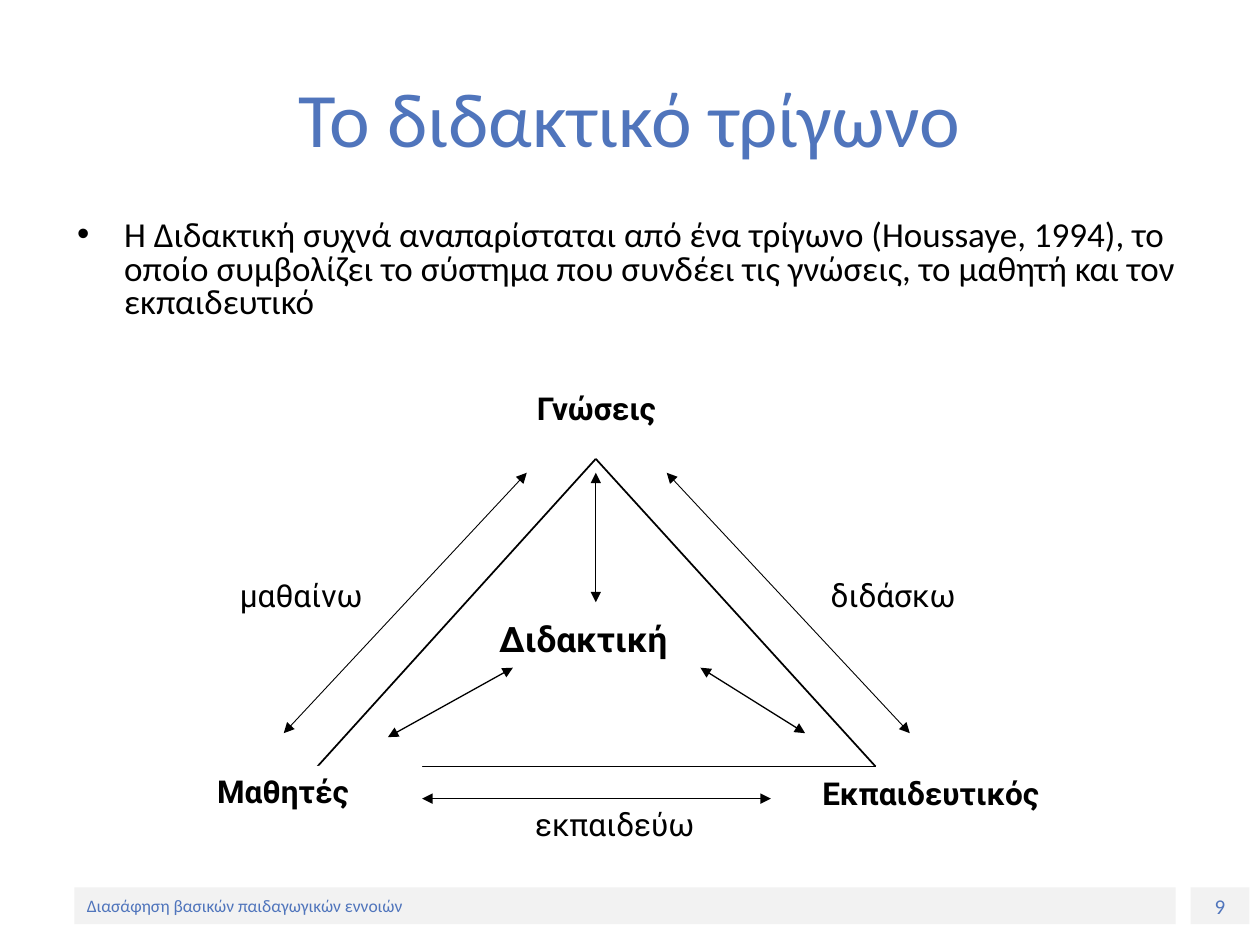
from dataclasses import dataclass

from lxml.etree import SubElement
from pptx import Presentation
from pptx.dml.color import RGBColor as Color
from pptx.enum.shapes import MSO_CONNECTOR as Connector, MSO_SHAPE as Shape
from pptx.enum.text import MSO_ANCHOR as Anchor, PP_ALIGN as Align
from pptx.oxml.ns import qn
from pptx.slide import Slide
from pptx.text.text import TextFrame
from pptx.util import Cm, Pt


@dataclass(frozen=True)
class Theme:
    accent: Color = Color(0x50, 0x75, 0xBC)
    ink: Color = Color(0, 0, 0)
    paper: Color = Color(0xFF, 0xFF, 0xFF)
    band: Color = Color(0xF2, 0xF2, 0xF2)
    text_font: str = "Calibri"
    diagram_font: str = "Roboto"
    title_size: int = 44
    body_size: int = 20
    centre_size: int = 20
    label_size: int = 18
    number_size: int = 12
    footer_size: int = 10
    side_width: float = 1
    inner_width: float = 0.75
    outer_width: float = 0.5


THEME = Theme()


@dataclass(frozen=True)
class Label:
    """A text in a box; lengths in centimetres. No fill means a text box."""
    text: str
    left: float
    top: float
    width: float
    height: float
    size: int = THEME.label_size
    bold: bool = False
    fill: Color | None = None
    font: str = THEME.diagram_font
    color: Color = THEME.ink
    align: Align = Align.CENTER
    anchor: Anchor = Anchor.TOP


@dataclass(frozen=True)
class Line:
    """A straight line between two points in centimetres."""
    start: tuple[float, float]
    end: tuple[float, float]
    width: float
    arrows: bool = True


def corner(text: str, left: float, top: float, width: float = 5.61,
           height: float = 1.57, size: int = THEME.label_size) -> Label:
    return Label(text, left, top, width, height, size, True, THEME.paper)


def action(text: str, left: float, top: float) -> Label:
    return Label(text, left, top, 4.93, 1.32)


def band(text: str, left: float, width: float, size: int, align: Align) -> Label:
    return Label(text, left, 17.89, width, 0.74, size, False, THEME.band,
                 THEME.text_font, THEME.accent, align, Anchor.MIDDLE)


# Footer
FOOTER = [
    band("9", 24, 1.19, THEME.number_size, Align.CENTER),
    band("Διασάφηση βασικών παιδαγωγικών εννοιών", 1.5, 22.2,
         THEME.footer_size, Align.LEFT),
]

# Triangle and the arrows inside it
APEX, LEFT, RIGHT = (12.01, 9.25), (6.4, 15.45), (17.65, 15.45)
INNER_LABELS = [
    corner("Διδακτική", 9.22, 12.32, 5.08, 1.5, THEME.centre_size),
    corner("Γνώσεις", 9.22, 7.72),
]
SIDES = [Line(start, end, THEME.side_width, arrows=False)
         for start, end in ((APEX, LEFT), (LEFT, RIGHT), (RIGHT, APEX))]
INNER_ARROWS = [
    Line((12.01, 12.14), (12.01, 9.53), THEME.inner_width),
    Line((14.12, 13.46), (16.23, 14.78), THEME.inner_width),
    Line((7.82, 14.86), (10.34, 13.46), THEME.inner_width),
]

# Base corners, actions and the arrows along the sides
OUTER_LABELS = [
    corner("Μαθητές", 2.9, 15.44),
    corner("Εκπαιδευτικός", 14.83, 15.47, 7.87),
    action("εκπαιδεύω", 9.93, 16.1),
    action("διδάσκω", 15.54, 11.48),
    action("μαθαίνω", 3.61, 11.48),
]
OUTER_ARROWS = [
    Line((8.51, 16.1), (15.54, 16.1), THEME.outer_width),
    Line((5.72, 14.78), (10.62, 9.53), THEME.outer_width),
    Line((18.34, 14.78), (13.44, 9.53), THEME.outer_width),
]


def write(frame: TextFrame, text: str, font: str, size: int, color: Color,
          align: Align, anchor: Anchor, bold: bool = False) -> None:
    frame.word_wrap = True
    frame.vertical_anchor = anchor
    para = frame.paragraphs[0]
    para.alignment = align
    span = para.add_run()
    span.text = text
    span.font.name = font
    span.font.size = Pt(size)
    span.font.bold = bold
    span.font.color.rgb = color


def draw_label(page: Slide, label: Label) -> None:
    place = [Cm(v) for v in (label.left, label.top, label.width, label.height)]
    if label.fill is None:
        box = page.shapes.add_textbox(*place)
    else:
        box = page.shapes.add_shape(Shape.RECTANGLE, *place)
        box.shadow.inherit = False
        box.fill.solid()
        box.fill.fore_color.rgb = label.fill
        box.line.fill.background()
    write(box.text_frame, label.text, label.font, label.size, label.color,
          label.align, label.anchor, label.bold)


def draw_line(page: Slide, line: Line) -> None:
    ends = [Cm(v) for v in (*line.start, *line.end)]
    connector = page.shapes.add_connector(Connector.STRAIGHT, *ends)
    connector.line.color.rgb = THEME.ink
    connector.line.width = Pt(line.width)
    if line.arrows:
        outline = connector.line._get_or_add_ln()
        for tag in ("a:headEnd", "a:tailEnd"):
            SubElement(outline, qn(tag), type="triangle")
    SubElement(connector._element.spPr, qn("a:effectLst"))


def fill_placeholders(page: Slide) -> None:
    title, body = page.shapes.title, page.placeholders[1]
    for holder, place in ((title, (1.27, 0.76, 22.86, 3.18)),
                          (body, (1.3, 4.32, 22.86, 12.57))):
        holder.left, holder.top, holder.width, holder.height = map(Cm, place)
    write(title.text_frame, "Το διδακτικό τρίγωνο", THEME.text_font,
          THEME.title_size, THEME.accent, Align.CENTER, Anchor.MIDDLE)
    write(body.text_frame,
          "Η Διδακτική συχνά αναπαρίσταται από ένα τρίγωνο (Houssaye, 1994), "
          "το οποίο συμβολίζει το σύστημα που συνδέει τις γνώσεις, το μαθητή "
          "και τον εκπαιδευτικό",
          THEME.text_font, THEME.body_size, THEME.ink, Align.LEFT, Anchor.TOP)
    para = body.text_frame.paragraphs[0]
    para.line_spacing = 0.8
    para.space_before, para.space_after = Pt(12), Pt(3)
    properties = para._p.get_or_add_pPr()
    properties.set("marL", str(Cm(0.95)))
    properties.set("indent", str(-Cm(0.95)))
    SubElement(properties, qn("a:buChar"), char="•")


def main() -> None:
    deck = Presentation()
    deck.slide_width, deck.slide_height = Cm(25.4), Cm(19.05)
    page = deck.slides.add_slide(deck.slide_layouts[1])
    fill_placeholders(page)
    # Later labels cover part of the triangle, so the order matters
    for item in (*FOOTER, *INNER_LABELS, *SIDES, *INNER_ARROWS,
                 *OUTER_LABELS, *OUTER_ARROWS):
        if isinstance(item, Label):
            draw_label(page, item)
        else:
            draw_line(page, item)
    deck.save("out.pptx")


if __name__ == "__main__":
    main()
